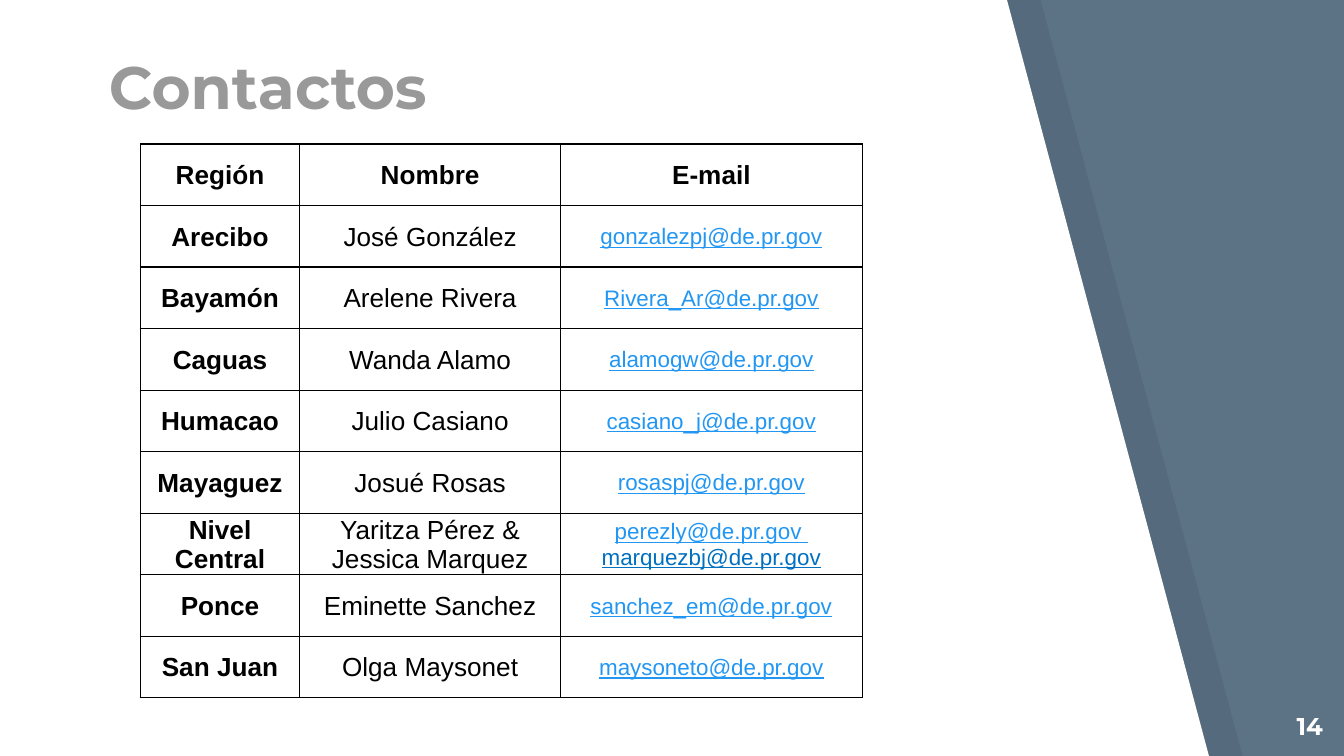
from lxml import etree
from pptx import Presentation
from pptx.dml.color import RGBColor
from pptx.enum.text import MSO_ANCHOR, MSO_AUTO_SIZE, PP_ALIGN
from pptx.oxml.ns import qn
from pptx.util import Inches, Pt

CENTER, LEFT, RIGHT = PP_ALIGN.CENTER, PP_ALIGN.LEFT, PP_ALIGN.RIGHT
TOP, MIDDLE, BOTTOM = MSO_ANCHOR.TOP, MSO_ANCHOR.MIDDLE, MSO_ANCHOR.BOTTOM
NO_AUTOFIT = MSO_AUTO_SIZE.NONE

SLATE = RGBColor(0x5C, 0x73, 0x86)
WHITE = RGBColor(0xFF, 0xFF, 0xFF)
BLACK = RGBColor(0x00, 0x00, 0x00)
GRAY = RGBColor(0x99, 0x99, 0x99)
LINK_BLUE = RGBColor(0x21, 0x96, 0xF3)
DEEP_BLUE = RGBColor(0x00, 0x70, 0xC0)

SLIDE_WIDTH = Inches(10)
SLIDE_HEIGHT = SLIDE_WIDTH * 9 // 16
TITLE_FONT, TABLE_FONT = "Montserrat", "Arial"

COLUMN_SHARES = (11.87, 19.4, 22.46)
ROW_SHARE = 8.14
CONTACTS = (
    ("Región", "Nombre", "E-mail"),
    ("Arecibo", "José González", "gonzalezpj@de.pr.gov"),
    ("Bayamón", "Arelene Rivera", "Rivera_Ar@de.pr.gov"),
    ("Caguas", "Wanda Alamo", "alamogw@de.pr.gov"),
    ("Humacao", "Julio Casiano", "casiano_j@de.pr.gov"),
    ("Mayaguez", "Josué Rosas", "rosaspj@de.pr.gov"),
    ("Nivel Central", "Yaritza Pérez & Jessica Marquez",
     "perezly@de.pr.gov \nmarquezbj@de.pr.gov"),
    ("Ponce", "Eminette Sanchez", "sanchez_em@de.pr.gov"),
    ("San Juan", "Olga Maysonet", "maysoneto@de.pr.gov"),
)


def across(percent):
    return round(SLIDE_WIDTH * percent / 100)


def down(percent):
    return round(SLIDE_HEIGHT * percent / 100)


def style_paragraph(paragraph, font_name, size, color, bold, align, underline=False):
    paragraph.alignment = align
    for run in paragraph.runs:
        font = run.font
        font.name, font.size = font_name, Pt(size)
        font.bold, font.underline = bold, underline
        font.color.rgb = color


def add_panel(slide, offset, color, opacity=None):
    outline = slide.shapes.build_freeform(across(offset), down(-0.2), scale=1)
    outline.add_line_segments([
        (across(offset), down(100.3)),
        (across(offset + 90), down(100.3)),
        (across(offset + 74.9), down(-0.2)),
    ])
    panel = outline.convert_to_shape()
    panel.shadow.inherit = False
    panel.line.fill.background()
    panel.fill.solid()
    panel.fill.fore_color.rgb = color
    if opacity is not None:
        tint = panel.fill._xPr.find(".//" + qn("a:srgbClr"))
        etree.SubElement(tint, qn("a:alpha"), val=str(opacity * 1000))


def write_label(label, text, box, size, color, align, anchor):
    left, top, width, height = box
    label.left, label.top = across(left), down(top)
    label.width, label.height = across(width), down(height)
    frame = label.text_frame
    frame.text = text
    frame.word_wrap, frame.auto_size = True, NO_AUTOFIT
    frame.vertical_anchor = anchor
    frame.margin_left = frame.margin_right = Inches(0.1)
    frame.margin_top = frame.margin_bottom = Inches(0.1)
    style_paragraph(frame.paragraphs[0], TITLE_FONT, size, color, True, align)


def add_borders(cell):
    properties = cell._tc.get_or_add_tcPr()
    for position, side in enumerate(("lnL", "lnR", "lnT", "lnB")):
        border = etree.Element(qn("a:" + side), w=str(Pt(0.75)))
        fill = etree.SubElement(border, qn("a:solidFill"))
        etree.SubElement(fill, qn("a:srgbClr"), val=str(BLACK))
        properties.insert(position, border)


def write_cell(cell, text, is_header, column):
    cell.text_frame.text = text
    cell.vertical_anchor = MIDDLE
    cell.margin_left = cell.margin_right = cell.margin_top = Inches(0.01)
    cell.margin_bottom = 0
    cell.fill.background()
    add_borders(cell)
    is_email = column == 2 and not is_header
    bold = is_header or column == 0
    for line, paragraph in enumerate(cell.text_frame.paragraphs):
        color = (LINK_BLUE, DEEP_BLUE)[line] if is_email else BLACK
        style_paragraph(paragraph, TABLE_FONT, 12 if is_email else 14,
                        color, bold, CENTER, is_email)


def add_contact_table(slide):
    table = slide.shapes.add_table(
        len(CONTACTS), len(COLUMN_SHARES), across(10.44), down(19.05),
        across(sum(COLUMN_SHARES)), down(ROW_SHARE * len(CONTACTS))).table
    table.first_row = table.horz_banding = False
    for column, share in zip(table.columns, COLUMN_SHARES):
        column.width = across(share)
    for row_index, contact in enumerate(CONTACTS):
        table.rows[row_index].height = down(ROW_SHARE)
        for column_index, text in enumerate(contact):
            write_cell(table.cell(row_index, column_index), text,
                       row_index == 0, column_index)


def main():
    deck = Presentation()
    deck.slide_width, deck.slide_height = SLIDE_WIDTH, SLIDE_HEIGHT
    slide = deck.slides.add_slide(deck.slide_layouts[5])
    slide.background.fill.solid()
    slide.background.fill.fore_color.rgb = SLATE

    add_panel(slide, 2.5, BLACK, opacity=7)
    add_panel(slide, 0, WHITE)

    page_number = slide.shapes.add_textbox(0, 0, 0, 0)
    write_label(page_number, "14", (93.4, 92.3, 6, 7.7), 13, WHITE, RIGHT, TOP)

    title = slide.shapes.title
    slide.shapes._spTree.append(title._element)
    write_label(title, "Contactos", (7.1, 5.7, 55.6, 12.1), 32, GRAY, LEFT, BOTTOM)

    add_contact_table(slide)
    deck.save("out.pptx")


if __name__ == "__main__":
    main()
